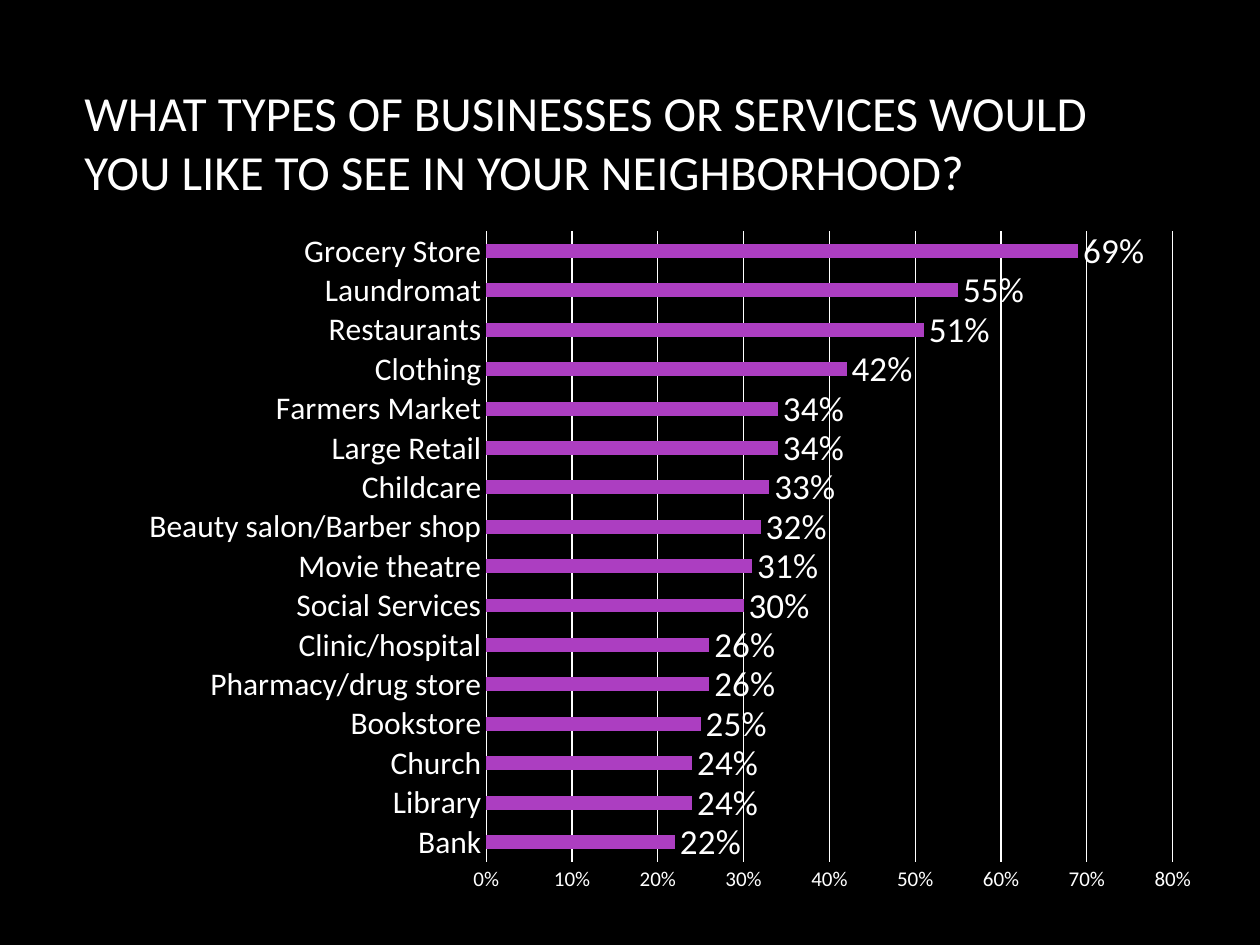
"""Build a slide with a bar chart of the businesses residents would like to see."""
import pptx
import pptx.chart.data
import pptx.dml.color
import pptx.enum.chart
import pptx.enum.text
import pptx.oxml
import pptx.oxml.ns
import pptx.util

Inches = pptx.util.Inches
Pt = pptx.util.Pt

TITLE = "WHAT TYPES OF BUSINESSES OR SERVICES WOULD YOU LIKE TO SEE IN YOUR NEIGHBORHOOD?"
ANSWERS = [
    ("Grocery Store", 0.69),
    ("Laundromat", 0.55),
    ("Restaurants", 0.51),
    ("Clothing", 0.42),
    ("Farmers Market", 0.34),
    ("Large Retail", 0.34),
    ("Childcare", 0.33),
    ("Beauty salon/Barber shop", 0.32),
    ("Movie theatre", 0.31),
    ("Social Services", 0.30),
    ("Clinic/hospital", 0.26),
    ("Pharmacy/drug store", 0.26),
    ("Bookstore", 0.25),
    ("Church", 0.24),
    ("Library", 0.24),
    ("Bank", 0.22),
]
PLOT_AREA = {"x": 0.37, "y": 0.03, "w": 0.6, "h": 0.91}
PERCENT = "###0%"
FONT = "Calibri"
BLACK = pptx.dml.color.RGBColor(0x00, 0x00, 0x00)
WHITE = pptx.dml.color.RGBColor(0xFF, 0xFF, 0xFF)
PURPLE = pptx.dml.color.RGBColor(0xAC, 0x3E, 0xC1)


def style_font(font, size):
    font.name = FONT
    font.size = Pt(size)
    font.bold = False
    font.color.rgb = WHITE


def style_line(line):
    line.color.rgb = WHITE
    line.width = Pt(0.75)


def add_title(page):
    title = page.shapes.title
    title.left, title.top = Inches(0.57), Inches(0.33)
    title.width, title.height = Inches(8.5), Inches(1.59)
    title.fill.solid()
    title.fill.fore_color.rgb = BLACK
    frame = title.text_frame
    frame.text = TITLE
    frame.word_wrap = True
    frame.auto_size = pptx.enum.text.MSO_AUTO_SIZE.NONE
    frame.vertical_anchor = pptx.enum.text.MSO_ANCHOR.MIDDLE
    paragraph = frame.paragraphs[0]
    paragraph.alignment = pptx.enum.text.PP_ALIGN.LEFT
    style_font(paragraph.font, 28)


def place_plot(chart):
    settings = {"layoutTarget": "inner", "xMode": "edge", "yMode": "edge", **PLOT_AREA}
    entries = "".join(f'<c:{name} val="{value}"/>' for name, value in settings.items())
    namespace = pptx.oxml.ns.nsdecls("c")
    layout = pptx.oxml.parse_xml(
        f"<c:layout {namespace}><c:manualLayout>{entries}</c:manualLayout></c:layout>"
    )
    plot_area = chart.element.chart.plotArea
    for old_layout in plot_area.findall(pptx.oxml.ns.qn("c:layout")):
        plot_area.remove(old_layout)
    plot_area.insert(0, layout)


def add_answer_chart(page):
    data = pptx.chart.data.CategoryChartData(number_format=PERCENT)
    names, shares = zip(*reversed(ANSWERS))
    data.categories = names
    data.add_series("Series 1", shares)
    chart = page.shapes.add_chart(
        pptx.enum.chart.XL_CHART_TYPE.BAR_CLUSTERED,
        Inches(0.5), Inches(1.67), Inches(9.08), Inches(5.5), data,
    ).chart
    chart.has_title = False
    chart.has_legend = False
    style_font(chart.font, 10)
    place_plot(chart)

    for axis, size in ((chart.category_axis, 18), (chart.value_axis, 12)):
        axis.major_tick_mark = pptx.enum.chart.XL_TICK_MARK.NONE
        axis.minor_tick_mark = pptx.enum.chart.XL_TICK_MARK.NONE
        style_font(axis.tick_labels.font, size)
    style_line(chart.category_axis.format.line)
    values = chart.value_axis
    values.minimum_scale, values.maximum_scale, values.major_unit = 0, 0.8, 0.1
    values.format.line.fill.background()
    values.has_major_gridlines = True
    style_line(values.major_gridlines.format.line)
    values.tick_labels.number_format = PERCENT
    values.tick_labels.number_format_is_linked = False

    plot = chart.plots[0]
    plot.gap_width = 182
    plot.vary_by_categories = False
    series = plot.series[0]
    series.format.fill.solid()
    series.format.fill.fore_color.rgb = PURPLE
    labels = series.data_labels
    labels.show_value = True
    labels.number_format = PERCENT
    labels.number_format_is_linked = False
    labels.position = pptx.enum.chart.XL_LABEL_POSITION.OUTSIDE_END
    style_font(labels.font, 20)


def main():
    deck = pptx.Presentation()
    deck.slide_width, deck.slide_height = Inches(10), Inches(7.5)
    page = deck.slides.add_slide(deck.slide_layouts.get_by_name("Title Only"))
    page.background.fill.solid()
    page.background.fill.fore_color.rgb = BLACK
    add_title(page)
    add_answer_chart(page)
    deck.save("out.pptx")


if __name__ == "__main__":
    main()
